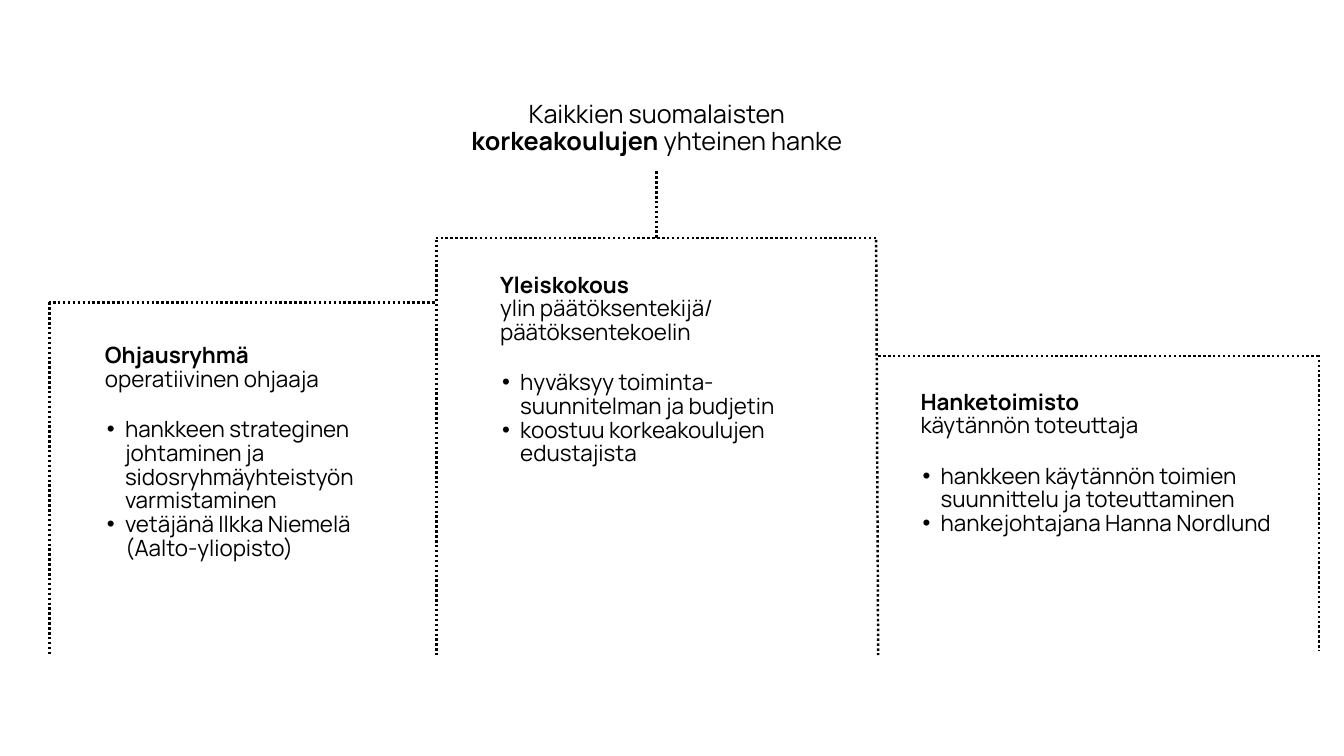
from dataclasses import dataclass

from lxml import etree
from pptx import Presentation
from pptx.dml.color import RGBColor
from pptx.enum import dml, shapes, text
from pptx.oxml import ns
from pptx.util import Inches, Pt

BLACK = RGBColor(0, 0, 0)
FONT = "Manrope"
BODY_SIZE = 16
LINE_HEIGHT = 0.88
LIST_GAP = Pt(19.2)
BOTTOM = 6.5


@dataclass
class Panel:
    holder: int
    box: tuple[float, float, float, float]
    inset: tuple[float, float]
    name: str
    role: str
    tasks: list[str]


PANELS = [
    Panel(1, (0.94, 3.37, 3.22, 2.76), (0.1, 0.05), "Ohjausryhmä", "operatiivinen ohjaaja",
          ["hankkeen strateginen johtaminen ja sidosryhmäyhteistyön varmistaminen",
           "vetäjänä Ilkka Niemelä\v(Aalto-yliopisto)"]),
    Panel(2, (4.86, 2.67, 3.22, 2.49), (0.1, 0.05), "Yleiskokous",
          "ylin päätöksentekijä/\vpäätöksentekoelin",
          ["hyväksyy toiminta-suunnitelman ja budjetin",
           "koostuu korkeakoulujen edustajista"]),
    Panel(4, (9.13, 3.88, 3.71, 2.86), (0, 0), "Hanketoimisto", "käytännön toteuttaja",
          ["hankkeen käytännön toimien suunnittelu ja toteuttaminen",
           "hankejohtajana Hanna Nordlund"]),
]

LINES = [
    (6.51, 2.36, 6.51, 1.68),
    (8.69, 2.36, 4.31, 2.36),
    (4.33, 2.38, 4.33, BOTTOM),
    (8.69, 2.38, 8.71, BOTTOM),
    (4.31, 3, 0.49, 3),
    (0.49, 3, 0.49, BOTTOM),
    (13.08, 3.53, 8.69, 3.53),
    (13.08, 3.52, 13.08, 6.46),
]


def set_all(target, values: dict) -> None:
    for name, value in values.items():
        setattr(target, name, value)


def prepare_frame(sp, box: tuple, inset: tuple[float, float]):
    """Place a placeholder and return its text frame, ready for text."""
    set_all(sp, dict(zip(("left", "top", "width", "height"), map(Inches, box))))
    across, down = map(Inches, inset)
    tf = sp.text_frame
    set_all(tf, {"margin_left": across, "margin_right": across,
                 "margin_top": down, "margin_bottom": down, "word_wrap": True,
                 "auto_size": text.MSO_AUTO_SIZE.NONE,
                 "vertical_anchor": text.MSO_ANCHOR.TOP})
    return tf


def format_paragraph(p, align, spacing: float, before=Pt(0)) -> None:
    set_all(p, {"alignment": align, "line_spacing": spacing,
                "space_before": before, "space_after": Pt(0)})


def set_bullet(p, char: str = "") -> None:
    """Give a paragraph a hanging bullet, or none when char is empty."""
    ppr = p._p.get_or_add_pPr()
    ppr.set("marL", str(Inches(0.2 if char else 0)))
    ppr.set("indent", str(Inches(-0.18 if char else 0)))
    if char:
        color = etree.SubElement(ppr, ns.qn("a:buClr"))
        etree.SubElement(color, ns.qn("a:srgbClr"), val=str(BLACK))
        etree.SubElement(ppr, ns.qn("a:buFont"), typeface="Arial")
        etree.SubElement(ppr, ns.qn("a:buChar"), char=char)
    else:
        etree.SubElement(ppr, ns.qn("a:buNone"))


def add_run(p, words: str, size: int, bold: bool = False) -> None:
    """Add equally formatted runs, with a line break at each vertical tab."""
    for i, line in enumerate(words.split("\v")):
        if i:
            p.add_line_break()
        r = p.add_run()
        r.text = line
        set_all(r.font, {"name": FONT, "size": Pt(size), "bold": bold})
        r.font.color.rgb = BLACK


def fill_panel(s, panel: Panel) -> None:
    tf = prepare_frame(s.placeholders[panel.holder], panel.box, panel.inset)
    p = tf.paragraphs[0]
    format_paragraph(p, text.PP_ALIGN.LEFT, LINE_HEIGHT)
    set_bullet(p)
    add_run(p, panel.name, BODY_SIZE, bold=True)
    p.add_line_break()
    add_run(p, panel.role, BODY_SIZE)
    for i, task in enumerate(panel.tasks):
        p = tf.add_paragraph()
        format_paragraph(p, text.PP_ALIGN.LEFT, LINE_HEIGHT, Pt(0) if i else LIST_GAP)
        set_bullet(p, "•")
        add_run(p, task, BODY_SIZE)


def fill_title(s) -> None:
    tf = prepare_frame(s.shapes.title, (4.31, 0.96, 4.41, 0.71), (0.1, 0.05))
    p = tf.paragraphs[0]
    format_paragraph(p, text.PP_ALIGN.CENTER, 0.9)
    for words, bold in (("Kaikkien suomalaisten ", False),
                        ("korkeakoulujen", True), (" yhteinen hanke", False)):
        add_run(p, words, 18, bold)


def add_dotted_line(s, ends: tuple) -> None:
    c = s.shapes.add_connector(shapes.MSO_CONNECTOR.STRAIGHT, *map(Inches, ends))
    set_all(c.line, {"width": Pt(1.75), "dash_style": dml.MSO_LINE.ROUND_DOT})
    c.line.color.rgb = BLACK
    etree.SubElement(c._element.spPr, ns.qn("a:effectLst"))


def main() -> None:
    prs = Presentation()
    set_all(prs, {"slide_width": Inches(13.33), "slide_height": Inches(7.5)})
    s = prs.slides.add_slide(prs.slide_layouts.get_by_name("Comparison"))
    fill_title(s)
    for panel in PANELS:
        fill_panel(s, panel)
    for sp in list(s.placeholders):
        if not sp.text_frame.text:
            sp._element.getparent().remove(sp._element)
    for ends in LINES:
        add_dotted_line(s, ends)
    prs.save("out.pptx")


if __name__ == "__main__":
    main()
